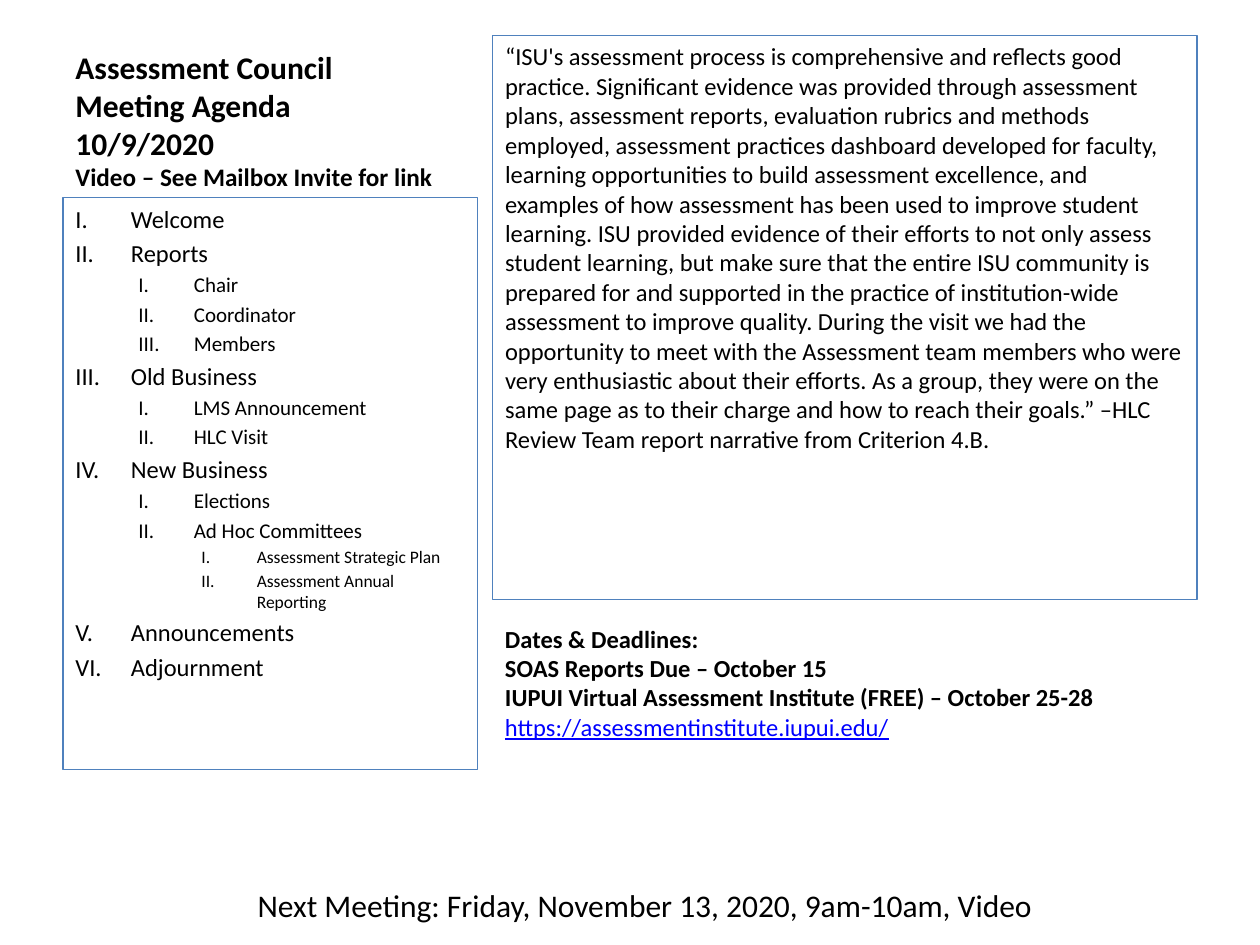
from lxml.etree import SubElement
from pptx import Presentation
from pptx.dml.color import RGBColor
from pptx.enum.shapes import MSO_SHAPE
from pptx.enum.text import MSO_ANCHOR, PP_ALIGN
from pptx.oxml.ns import qn
from pptx.util import Inches, Pt

BLACK = RGBColor(0, 0, 0)
BLUE = RGBColor(0x4F, 0x81, 0xBD)
LINK = RGBColor(0, 0, 0xFF)

TITLE = ["Assessment Council", "Meeting Agenda", "10/9/2020",
         "Video – See Mailbox Invite for link"]
QUOTE = [
    "“ISU's assessment process is comprehensive and reflects good practice.",
    "Significant evidence was provided through assessment plans, assessment "
    "reports, evaluation rubrics and methods employed, assessment practices "
    "dashboard developed for faculty, learning opportunities to build "
    "assessment excellence, and examples of how assessment has been used to "
    "improve student learning.",
    "ISU provided evidence of their efforts to not only assess student "
    "learning, but make sure that the entire ISU community is prepared for "
    "and supported in the practice of institution-wide assessment to improve "
    "quality.",
    "During the visit we had the opportunity to meet with the Assessment team "
    "members who were very enthusiastic about their efforts.",
    "As a group, they were on the same page as to their charge and how to "
    "reach their goals.”",
    "–HLC Review Team report narrative from Criterion 4.B.",
]
AGENDA = [
    (0, "Welcome"),
    (0, "Reports"),
    (1, "Chair"),
    (1, "Coordinator"),
    (1, "Members"),
    (0, "Old Business"),
    (1, "LMS Announcement"),
    (1, "HLC Visit"),
    (0, "New Business"),
    (1, "Elections"),
    (1, "Ad Hoc Committees"),
    (2, "Assessment Strategic Plan"),
    (2, "Assessment Annual Reporting"),
    (0, "Announcements"),
    (0, "Adjournment"),
]
DATES = ["Dates & Deadlines:", "SOAS Reports Due – October 15",
         "IUPUI Virtual Assessment Institute (FREE) – October 25-28",
         "https://assessmentinstitute.iupui.edu/"]
NEXT = "Next Meeting: Friday, November 13, 2020, 9am-10am, Video"

LEFT, RIGHT, SIDE = 0.5, 3.91, 3.29
SIZES = [14, 12, 10]
INDENT, STEP = 0.44, 0.5


def style(para, size, bold=False, color=BLACK):
    for run in para.runs:
        font = run.font
        font.name, font.size, font.bold = "Calibri", Pt(size), bold
        font.color.rgb = color


def add_text(slide, lines, place, size, bold=False, framed=False):
    spot = [Inches(n) for n in place]
    if framed:
        box = slide.shapes.add_shape(MSO_SHAPE.RECTANGLE, *spot)
        box.shadow.inherit = False
        box.fill.background()
        box.line.color.rgb = BLUE
        box.line.width = Pt(0.75)
    else:
        box = slide.shapes.add_textbox(*spot)
    frame = box.text_frame
    frame.word_wrap = True
    frame.vertical_anchor = MSO_ANCHOR.TOP
    frame.text = "\n".join(lines)
    for para in frame.paragraphs:
        para.alignment = PP_ALIGN.LEFT
        style(para, size, bold)
    return frame


def number(para, level):
    para.level = level
    props = para._p.get_or_add_pPr()
    props.set("marL", str(Inches(INDENT + STEP * level)))
    props.set("indent", str(-Inches(INDENT)))
    SubElement(props, qn("a:buFont"), typeface="+mj-lt")
    SubElement(props, qn("a:buAutoNum"), type="romanUcPeriod")


def main():
    deck = Presentation()
    deck.slide_width, deck.slide_height = Inches(10), Inches(7.5)
    slide = deck.slides.add_slide(deck.slide_layouts[6])

    title = add_text(slide, TITLE, (LEFT, 0.3, SIDE, 1.27), 18, bold=True)
    title.vertical_anchor = MSO_ANCHOR.BOTTOM
    style(title.paragraphs[-1], 14.4, bold=True)

    quote = " ".join(QUOTE)
    add_text(slide, [quote], (RIGHT, 0.28, 5.59, 4.48), 14, framed=True)

    items = [text for _, text in AGENDA]
    agenda = add_text(slide, items, (LEFT, 1.57, SIDE, 4.54), 14, framed=True)
    for row, (para, (level, _)) in enumerate(zip(agenda.paragraphs, AGENDA)):
        number(para, level)
        style(para, SIZES[level])
        if row:
            para.space_before = Pt(0.2 * SIZES[level])

    dates = add_text(slide, DATES, (RIGHT, 4.9, 5.84, 1.04), 14, bold=True)
    site = dates.paragraphs[-1]
    style(site, 14, color=LINK)
    site.runs[0].font.underline = True

    foot = add_text(slide, [NEXT], (LEFT, 6.98, 9.24, 0.4), 18)
    foot.paragraphs[0].alignment = PP_ALIGN.CENTER

    deck.save("out.pptx")


if __name__ == "__main__":
    main()
